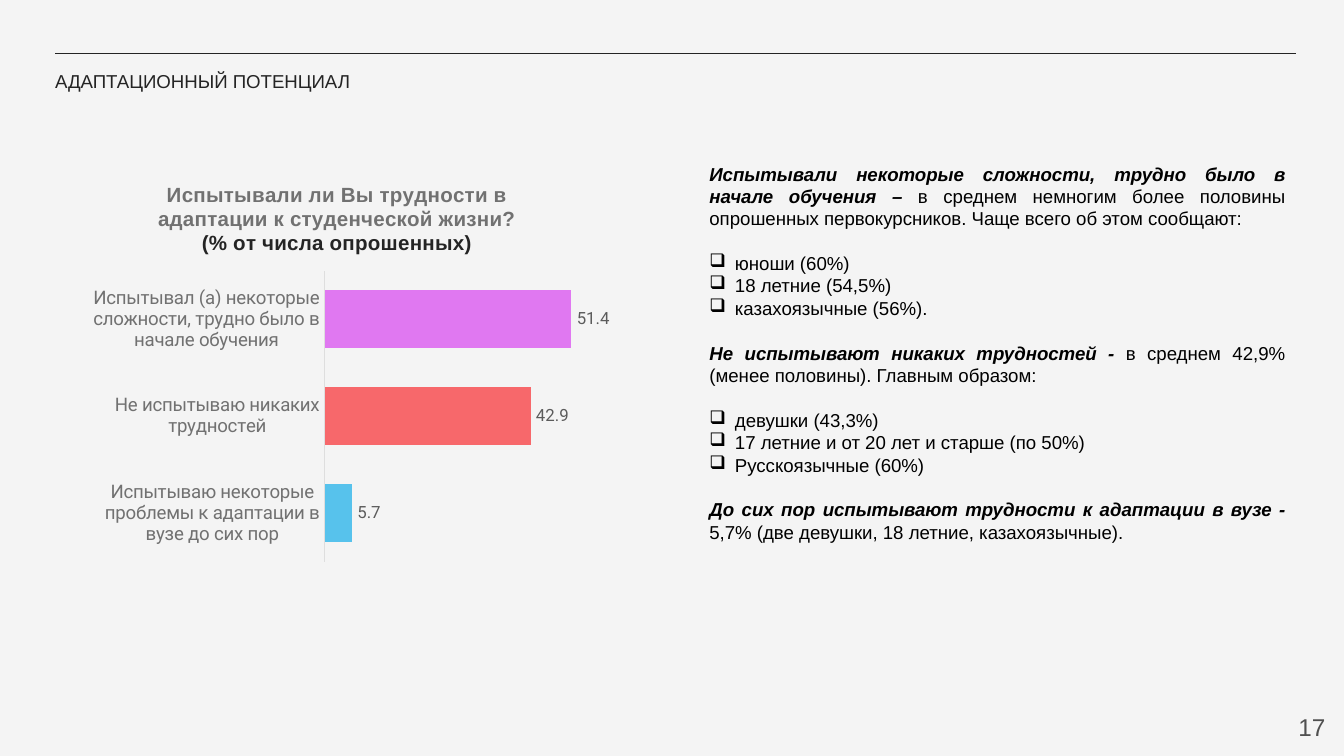
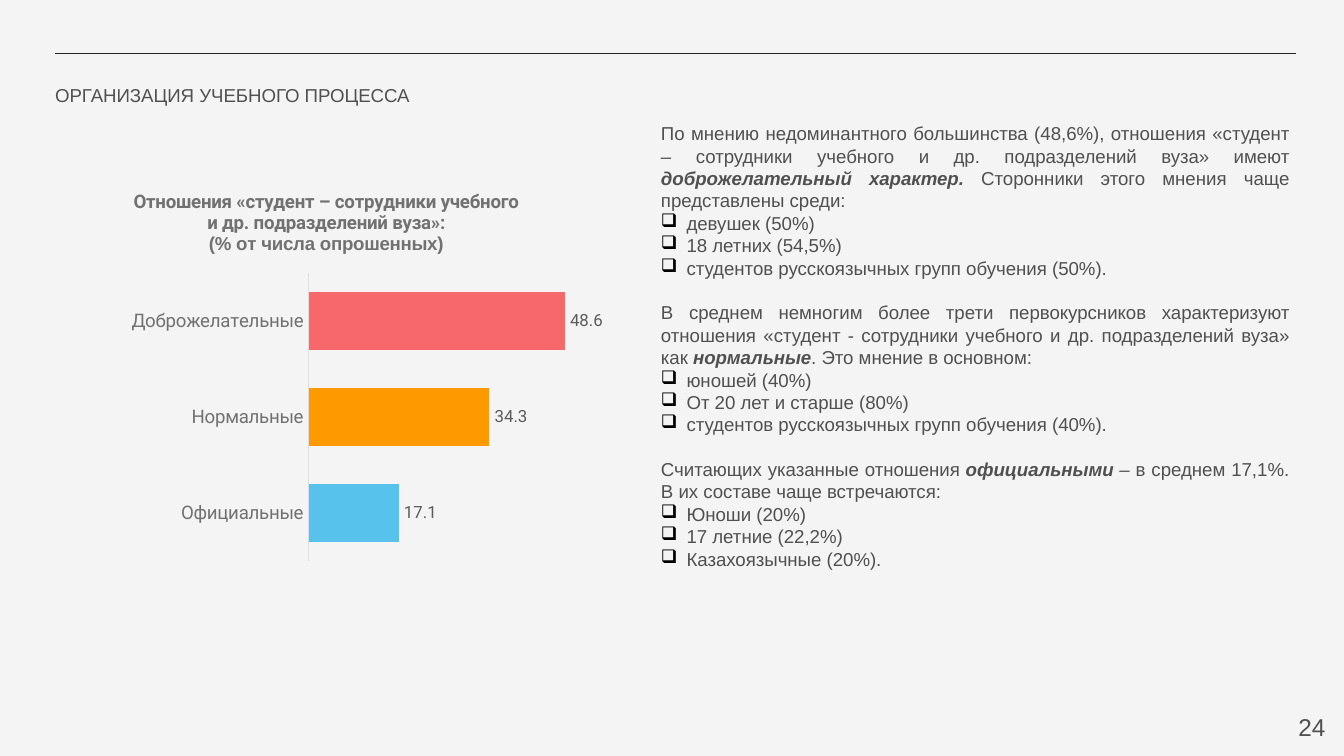
from lxml import etree
from pptx import Presentation, util as u
from pptx.chart.data import CategoryChartData
from pptx.dml.color import RGBColor
from pptx.enum import chart as ch, shapes, text
from pptx.oxml.ns import qn

# Shared style
SANS, LABEL = "Arial", "Roboto"
PAPER, INK, GREY, BLACK = "F4F4F4", "242424", "505050", "000000"
CHART_GREY, VALUE_GREY, AXIS = "717171", "5B5B5B", "DEDEDE"
BLUE, RED, VIOLET, ORANGE, GREEN = "57C2EC", "F7686B", "E078F1", "FF9900", "62CFB5"
LINE_PITCH = u.Pt(12)


def rgb(color):
    return RGBColor.from_string(color)


def inches(box):
    return [u.Inches(v) for v in box]


def set_font(font, size, color, name=SANS, bold=None):
    font.size, font.name, font.bold = u.Pt(size), name, bold
    font.color.rgb = rgb(color)


def set_frame(tf, margins=(0.1, 0.1, 0.1, 0.1), anchor=text.MSO_ANCHOR.MIDDLE):
    tf.word_wrap = True
    tf.auto_size = text.MSO_AUTO_SIZE.NONE
    tf.vertical_anchor = anchor
    tf.margin_left, tf.margin_top, tf.margin_right, tf.margin_bottom = inches(margins)


def style_layout(prs, layout):
    """Give the layout its background and top rule."""
    fill = prs.slide_master.background.fill
    fill.solid()
    fill.fore_color.rgb = rgb(PAPER)
    return layout


def add_top_rule(slide):
    ends = inches((0.41, 0.4, 9.64, 0.4))
    line = slide.shapes.add_connector(shapes.MSO_CONNECTOR.STRAIGHT, *ends)
    line.line.color.rgb = rgb(INK)
    line.line.width = u.Pt(0.75)
    etree.SubElement(line._element.spPr, qn("a:effectLst"))


def add_page(prs, layout, title, box, color, number, margin_left=0.1):
    """Start a slide with its rule, title and page number."""
    slide = prs.slides.add_slide(layout)
    add_top_rule(slide)

    sp = slide.shapes.title
    sp.left, sp.top, sp.width, sp.height = inches(box)
    set_frame(sp.text_frame, (margin_left, 0.1, 0.1, 0.1))
    p = sp.text_frame.paragraphs[0]
    p.text, p.alignment = title, text.PP_ALIGN.LEFT
    set_font(p.font, 10, color)

    tf = slide.shapes.add_textbox(*inches((9.36, 5.19, 0.6, 0.43))).text_frame
    set_frame(tf)
    p = tf.paragraphs[0]
    p.text, p.alignment = str(number), text.PP_ALIGN.RIGHT
    set_font(p.font, 13, GREY)
    return slide


def add_bullet(p):
    pPr = p._p.get_or_add_pPr()
    indent = u.Inches(0.19)
    pPr.set("marL", str(indent))
    pPr.set("indent", str(-indent))
    color = etree.Element(qn("a:buClr"))
    etree.SubElement(color, qn("a:srgbClr"), val=BLACK)
    char = etree.Element(qn("a:buChar"), char="❑")
    # Bullet marks stand before the default run properties
    for mark in (color, char):
        pPr.find(qn("a:defRPr")).addprevious(mark)


def add_findings(slide, box, blocks, color, margin_top=0.1, bullet_gap=0):
    """Write blocks of (lead runs, bullets); a lead run is (text, emphasised)."""
    tf = slide.shapes.add_textbox(*inches(box)).text_frame
    set_frame(tf, (0.1, margin_top, 0.1, margin_top), text.MSO_ANCHOR.TOP)

    def paragraph(runs, gap):
        p = tf.add_paragraph() if tf.paragraphs[0].runs else tf.paragraphs[0]
        p.alignment = text.PP_ALIGN.JUSTIFY
        p.line_spacing, p.space_before = LINE_PITCH, u.Pt(gap)
        set_font(p.font, 10, color)
        for words, strong in runs:
            r = p.add_run()
            r.text = words
            if strong:
                r.font.bold = r.font.italic = True
        return p

    for i, (lead, bullets) in enumerate(blocks):
        paragraph(lead, 12 if i else 0)
        for j, bullet in enumerate(bullets):
            add_bullet(paragraph([(bullet, False)], 0 if j else bullet_gap))


def set_layout(parent, index, **values):
    """Place a chart part by fractions of the chart area."""
    for old in parent.findall(qn("c:layout")):
        parent.remove(old)
    layout = etree.Element(qn("c:layout"))
    manual = etree.SubElement(layout, qn("c:manualLayout"))
    if "w" in values:
        etree.SubElement(manual, qn("c:layoutTarget"), val="inner")
    for axis in "xy":
        etree.SubElement(manual, qn(f"c:{axis}Mode"), val="edge")
    for key, value in values.items():
        etree.SubElement(manual, qn(f"c:{key}"), val=str(value))
    parent.insert(index, layout)


def add_bars(slide, box, title, title_size, title_at, plot_at, bars):
    """Draw bars given as (category, value, colour), lowest first."""
    data = CategoryChartData()
    data.categories = [name for name, _, _ in bars]
    data.add_series("Series 1", [value for _, value, _ in bars])
    chart = slide.shapes.add_chart(
        ch.XL_CHART_TYPE.BAR_CLUSTERED, *inches(box), data).chart
    chart.has_legend = False
    set_font(chart.font, 10, INK)

    # Title lines
    tf = chart.chart_title.text_frame
    for i, (line, color, font) in enumerate(title):
        p = tf.add_paragraph() if i else tf.paragraphs[0]
        r = p.add_run()
        r.text = line
        set_font(r.font, title_size, color, font, True)
    set_layout(chart.element.find(".//" + qn("c:title")), 1,
               x=title_at[0], y=title_at[1])
    set_layout(chart.element.find(".//" + qn("c:plotArea")), 0,
               **dict(zip("xywh", plot_at)))

    # Axes
    names, values = chart.category_axis, chart.value_axis
    names.major_tick_mark = names.minor_tick_mark = ch.XL_TICK_MARK.NONE
    names.format.line.color.rgb = rgb(AXIS)
    names.format.line.width = u.Pt(0.75)
    set_font(names.tick_labels.font, 10, CHART_GREY, LABEL)
    values.visible = values.has_major_gridlines = False
    values.minimum_scale, values.maximum_scale = 0, 60

    # Bars and value labels
    plot = chart.plots[0]
    plot.gap_width, plot.vary_by_categories = 66, False
    series = plot.series[0]
    series.format.fill.solid()
    series.format.fill.fore_color.rgb = rgb(GREEN)
    for i, (_, _, color) in enumerate(bars):
        fill = series.points[i].format.fill
        fill.solid()
        fill.fore_color.rgb = rgb(color)
    labels = series.data_labels
    labels.show_value = True
    labels.position = ch.XL_LABEL_POSITION.OUTSIDE_END
    set_font(labels.font, 9, VALUE_GREY, LABEL)


def add_adaptation(prs, layout):
    slide = add_page(prs, layout, "АДАПТАЦИОННЫЙ ПОТЕНЦИАЛ",
                     (0.16, 0.41, 3.97, 0.38), INK, 17, margin_left=0.25)
    add_bars(
        slide, (0.59, 1.16, 3.97, 3.05),
        [("Испытывали ли Вы трудности в адаптации к студенческой жизни?",
          CHART_GREY, SANS),
         ("(% от числа опрошенных)", INK, SANS)],
        11, (0.14, 0.05), (0.46, 0.28, 0.54, 0.71),
        [("Испытываю некоторые проблемы к адаптации в вузе до сих пор", 5.7, BLUE),
         ("Не испытываю никаких трудностей", 42.9, RED),
         ("Испытывал (а) некоторые сложности, трудно было в начале обучения",
          51.4, VIOLET)])
    add_findings(slide, (5.18, 1.16, 4.48, 3.3), [
        ([("Испытывали некоторые сложности, трудно было в начале обучения –", True),
          (" в среднем немногим более половины опрошенных первокурсников. "
           "Чаще всего об этом сообщают:", False)],
         ["юноши (60%)", "18 летние (54,5%)", "казахоязычные (56%)."]),
        ([("Не испытывают никаких трудностей -", True),
          (" в среднем 42,9% (менее половины). Главным образом:", False)],
         ["девушки (43,3%)", "17 летние и от 20 лет и старше (по 50%)",
          "Русскоязычные (60%)"]),
        ([("До сих пор испытывают трудности к адаптации в вузе - ", True),
          ("5,7% (две девушки, 18 летние, казахоязычные).", False)], []),
    ], BLACK, margin_top=0.05, bullet_gap=12)


def add_study_process(prs, layout):
    slide = add_page(prs, layout, "ОРГАНИЗАЦИЯ УЧЕБНОГО ПРОЦЕССА",
                     (0.31, 0.52, 4.34, 0.37), GREY, 24)
    add_findings(slide, (4.82, 0.81, 4.87, 3.84), [
        ([("По мнению недоминантного большинства (48,6%), отношения «студент – "
           "сотрудники учебного и др. подразделений вуза» имеют ", False),
          ("доброжелательный характер. ", True),
          ("Сторонники этого мнения чаще представлены среди:", False)],
         ["девушек (50%)", "18 летних (54,5%)",
          "студентов русскоязычных групп обучения (50%)."]),
        ([("В среднем немногим более трети первокурсников характеризуют отношения "
           "«студент - сотрудники учебного и др. подразделений вуза» как ", False),
          ("нормальные", True), (". Это мнение в основном:", False)],
         ["юношей (40%)", "От 20 лет и старше (80%)",
          "студентов русскоязычных групп обучения (40%)."]),
        ([("Считающих указанные отношения ", False), ("официальными", True),
          (" – в среднем 17,1%. В их составе чаще встречаются:", False)],
         ["Юноши (20%)", "17 летние (22,2%)", "Казахоязычные (20%)."]),
    ], GREY)
    add_bars(
        slide, (0.21, 1.2, 4.44, 3.46),
        [("Отношения «студент – сотрудники учебного", CHART_GREY, LABEL),
         ("и др. подразделений вуза»:", CHART_GREY, LABEL),
         ("(% от числа опрошенных)", CHART_GREY, SANS)],
        10, (0.17, 0.05), (0.47, 0.24, 0.53, 0.62),
        [("Официальные", 17.1, BLUE), ("Нормальные", 34.3, ORANGE),
         ("Доброжелательные", 48.6, RED)])


def main():
    prs = Presentation()
    prs.slide_width = u.Inches(10)
    prs.slide_height = prs.slide_width * 9 // 16
    layout = style_layout(prs, prs.slide_layouts.get_by_name("Title Only"))
    add_adaptation(prs, layout)
    add_study_process(prs, layout)
    prs.save("out.pptx")


if __name__ == "__main__":
    main()
